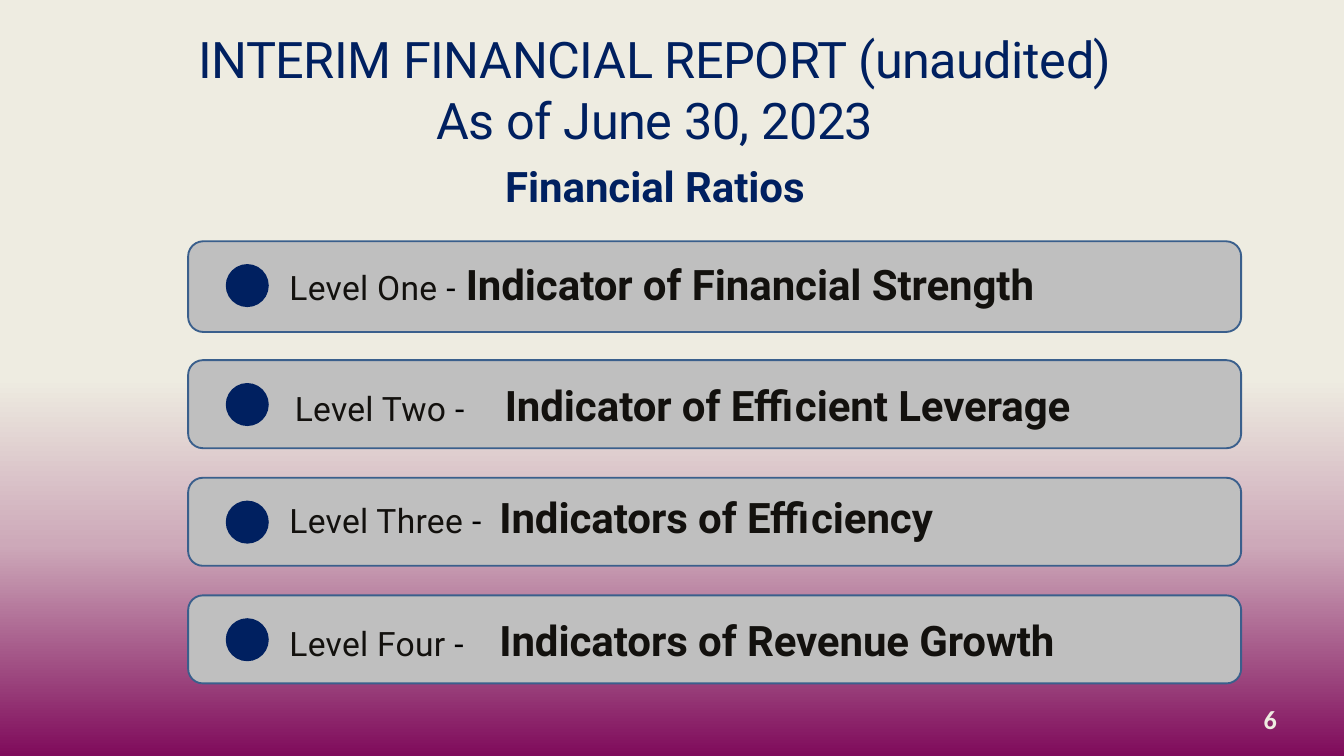
import dataclasses

import lxml.etree
import pptx
import pptx.dml.color
import pptx.enum.shapes
import pptx.enum.text
import pptx.oxml.ns
import pptx.util

Inches = pptx.util.Inches
Align = pptx.enum.text.PP_ALIGN
Anchor = pptx.enum.text.MSO_ANCHOR
Shape = pptx.enum.shapes.MSO_SHAPE


@dataclasses.dataclass(frozen=True)
class Theme:
    """Colours, fonts and type sizes of the slide."""

    navy: str = "002060"
    ink: str = "13110E"
    black: str = "000000"
    cream: str = "EEECE1"
    panel: str = "BFBFBF"
    outline: str = "3A5F8C"
    gradient: tuple = ((50, "EEECE1"), (72, "CDA9B9"), (100, "7F0B5B"))
    font: str = "Roboto"
    number_font: str = "Calibri"
    title_size: int = 54
    strong_size: int = 45
    label_size: int = 36
    number_size: int = 28


THEME = Theme()

LEVELS = [
    ("Level One ", "Indicator of Financial Strength", 3.59, 1.35, 4.21, 3.79),
    ("Level Two ", "Indicator of Efficient Leverage", 5.36, 1.31, 4.29, 5.59),
    ("Level Three ", "Indicators of Efficiency", 7.11, 1.31, 4.21, 7.26),
    ("Level Four ", "Indicators of Revenue Growth", 8.86, 1.31, 4.21, 9.09),
]


def rgb(value):
    """Return a colour object for a hexadecimal string."""
    return pptx.dml.color.RGBColor.from_string(value)


def format_run(run, size, color, bold=False, spacing=0, font=THEME.font):
    """Set the type of one run, with letter spacing in points."""
    run.font.name = font
    run.font.size = pptx.util.Pt(size)
    run.font.bold = bold
    run.font.color.rgb = rgb(color)
    if spacing:
        run.font._element.set("spc", str(round(spacing * 100)))


def set_background(slide):
    """Fill the background with the vertical theme gradient."""
    fill = slide.background.fill
    fill.gradient()
    fill.gradient_angle = 270
    qn = pptx.oxml.ns.qn
    stops = slide.element.find(".//" + qn("a:gsLst"))
    for stop in list(stops):
        stops.remove(stop)
    for position, color in THEME.gradient:
        stop = lxml.etree.SubElement(stops, qn("a:gs"), pos=str(position * 1000))
        lxml.etree.SubElement(stop, qn("a:srgbClr"), val=color)


def set_title(slide):
    """Place the report title and its bold subtitle in the title placeholder."""
    title = slide.shapes.title
    title.left, title.top = Inches(2.25), Inches(0.42)
    title.width, title.height = Inches(14.99), Inches(2.74)
    frame = title.text_frame
    frame.text = "INTERIM FINANCIAL REPORT (unaudited)\vAs of June 30, 2023\nFinancial Ratios"
    frame.margin_left = frame.margin_right = frame.margin_top = frame.margin_bottom = 0
    frame.vertical_anchor = Anchor.TOP
    frame.auto_size = pptx.enum.text.MSO_AUTO_SIZE.NONE
    heading, subtitle = frame.paragraphs
    for paragraph in frame.paragraphs:
        paragraph.alignment = Align.CENTER
    subtitle.space_before = pptx.util.Pt(12)
    for run in heading.runs:
        format_run(run, THEME.title_size, THEME.navy, spacing=-0.5)
    format_run(subtitle.runs[0], THEME.strong_size, THEME.navy, True, -0.1)


def add_filled_shape(slide, kind, left, top, width, height, fill, line=None):
    """Add a flat preset shape with an optional outline."""
    shape = slide.shapes.add_shape(
        kind, Inches(left), Inches(top), Inches(width), Inches(height)
    )
    shape.shadow.inherit = False
    shape.fill.solid()
    shape.fill.fore_color.rgb = rgb(fill)
    if line:
        shape.line.color.rgb = rgb(line)
        shape.line.width = pptx.util.Pt(2)
    else:
        shape.line.fill.background()


def add_text_box(slide, left, top, width, height):
    """Add a wrapping text box and return its frame."""
    box = slide.shapes.add_textbox(
        Inches(left), Inches(top), Inches(width), Inches(height)
    )
    box.text_frame.word_wrap = True
    return box.text_frame


def add_level(slide, level, indicator, top, height, text_left, text_top):
    """Add one panel with its dot, level label and indicator."""
    add_filled_shape(
        slide, Shape.ROUNDED_RECTANGLE, 2.8, top, 15.67, height,
        THEME.panel, THEME.outline,
    )
    add_filled_shape(slide, Shape.OVAL, 3.36, top + 0.34, 0.64, 0.64, THEME.navy)
    frame = add_text_box(slide, text_left, text_top, 13.36, 0.86)
    frame.vertical_anchor = Anchor.MIDDLE
    paragraph = frame.paragraphs[0]
    for text, size, color, bold, spacing in (
        (level, THEME.label_size, THEME.ink, False, 0.3),
        ("-\t ", THEME.label_size, THEME.black, False, 0),
        (indicator, THEME.strong_size, THEME.ink, True, -0.1),
    ):
        run = paragraph.add_run()
        run.text = text
        format_run(run, size, color, bold, spacing)


def add_page_number(slide, number):
    """Add the page number at the lower right."""
    frame = add_text_box(slide, 18.58, 10.46, 0.42, 0.47)
    frame.margin_left = frame.margin_right = frame.margin_top = frame.margin_bottom = 0
    paragraph = frame.paragraphs[0]
    paragraph.text = number
    paragraph.alignment = Align.RIGHT
    format_run(
        paragraph.runs[0], THEME.number_size, THEME.cream, True, font=THEME.number_font
    )


def main():
    """Build the financial ratios slide."""
    presentation = pptx.Presentation()
    presentation.slide_width = Inches(20)
    presentation.slide_height = Inches(11.25)
    slide = presentation.slides.add_slide(presentation.slide_layouts[5])
    set_background(slide)
    set_title(slide)
    for level in LEVELS:
        add_level(slide, *level)
    add_page_number(slide, "6")
    presentation.save("out.pptx")


if __name__ == "__main__":
    main()
